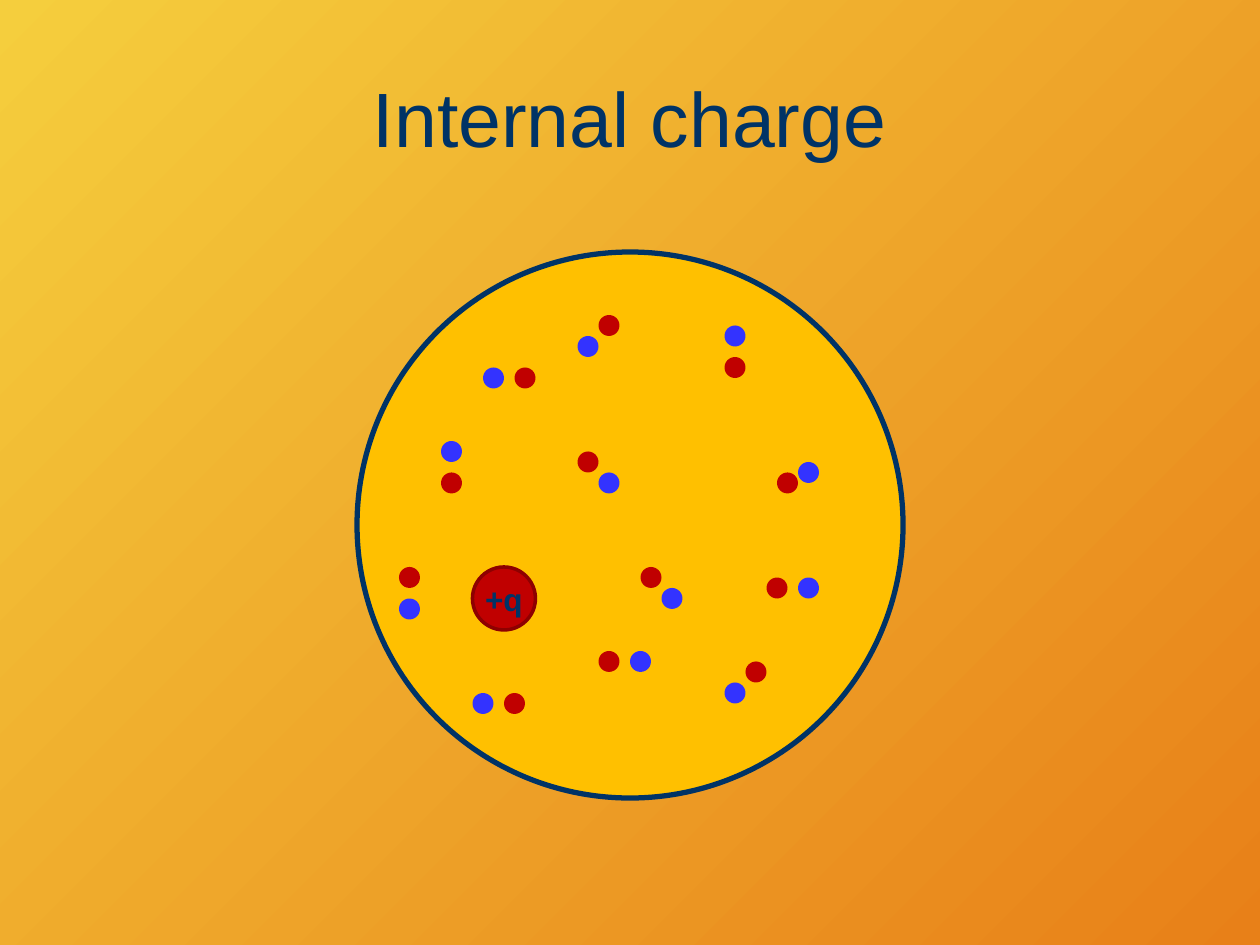
import pptx
import pptx.util
import pptx.dml.color
import pptx.enum.shapes
import pptx.enum.text

PX = 9525  # EMU per px, 96 px to the inch
DOT = 16  # diameter of a dipole's charges
COLORS = {
    "bg_start": "F5CE3D",
    "bg_end": "E88018",
    "navy": "003366",
    "sphere": "FFC000",
    "positive": "C00000",
    "positive_edge": "8E0000",
    "negative": "3333FF",
}

# Each dipole: left, top of the positive charge, then offset to the negative one
DIPOLES = [
    (440, 344, 16, 16),
    (592, 360, 16, -8),
    (456, 496, 24, 0),
    (456, 240, -16, 16),
    (584, 440, 24, 0),
    (336, 360, 0, -24),
    (384, 528, -24, 0),
    (568, 504, -16, 16),
    (552, 272, 0, -24),
    (488, 432, 16, 16),
    (392, 280, -24, 0),
    (304, 432, 0, 24),
]


def px(*values):
    return [pptx.util.Emu(v * PX) for v in values]


def rgb(name):
    return pptx.dml.color.RGBColor.from_string(COLORS[name])


def set_background(s):
    fill = s.background.fill
    fill.gradient()
    fill.gradient_angle = 315  # counter-clockwise: top left to bottom right
    for stop, name in zip(fill.gradient_stops, ("bg_start", "bg_end")):
        stop.color.rgb = rgb(name)


def set_text(sp, text, size, bold=False):
    tf = sp.text_frame
    tf.text = text
    tf.vertical_anchor = pptx.enum.text.MSO_ANCHOR.MIDDLE
    p = tf.paragraphs[0]
    p.alignment = pptx.enum.text.PP_ALIGN.CENTER
    p.font.name = "Arial"
    p.font.size = pptx.util.Pt(size)
    p.font.bold = bold
    p.font.color.rgb = rgb("navy")


def add_title(s, text):
    sp = s.shapes.title
    sp.left, sp.top, sp.width, sp.height = px(48, 29, 864, 120)
    set_text(sp, text, 44)


def add_circle(shapes, left, top, size, fill, line=None, weight=0):
    sp = shapes.add_shape(pptx.enum.shapes.MSO_SHAPE.OVAL,
                          *px(left, top, size, size))
    sp.shadow.inherit = False
    sp.fill.solid()
    sp.fill.fore_color.rgb = rgb(fill)
    if line:
        sp.line.color.rgb = rgb(line)
        sp.line.width = pptx.util.Pt(weight)
    else:
        sp.line.fill.background()
    return sp


def add_charge(s, left, top, size, text):
    sp = add_circle(s.shapes, left, top, size, "positive", "positive_edge", 2)
    tf = sp.text_frame
    tf.margin_left = tf.margin_top = tf.margin_right = tf.margin_bottom = 0
    tf.word_wrap = False
    set_text(sp, text, 18, bold=True)


def add_dipole(s, left, top, dx, dy):
    group = s.shapes.add_group_shape()
    add_circle(group.shapes, left, top, DOT, "positive")
    add_circle(group.shapes, left + dx, top + dy, DOT, "negative")


def main():
    prs = pptx.Presentation()
    prs.slide_width, prs.slide_height = px(960, 720)
    s = prs.slides.add_slide(prs.slide_layouts[5])  # title only
    set_background(s)
    add_title(s, "Internal charge")

    # Sphere with the free charge inside
    add_circle(s.shapes, 272, 192, 416, "sphere", "navy", 3)
    add_charge(s, 360, 432, 48, "+q")

    # Dipoles scattered through the sphere
    for dipole in DIPOLES:
        add_dipole(s, *dipole)

    prs.save("out.pptx")


if __name__ == "__main__":
    main()
